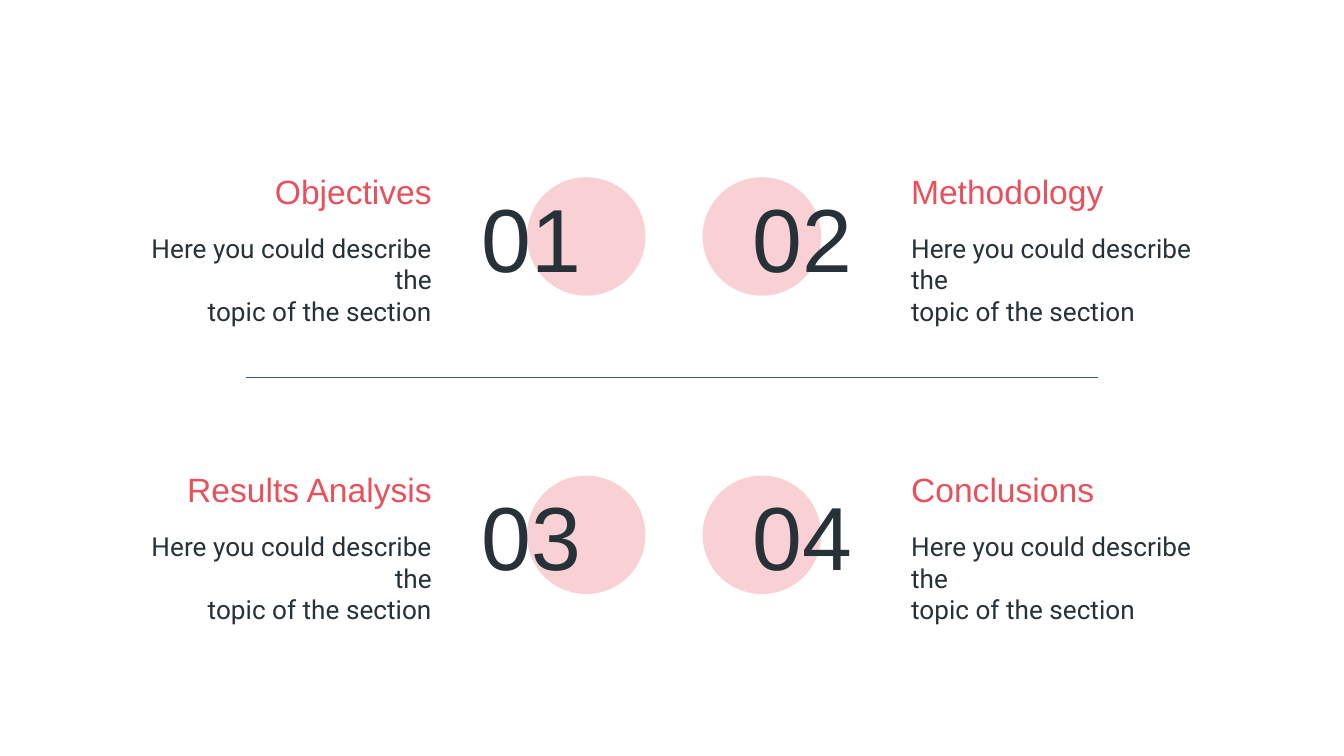
from dataclasses import dataclass
from typing import Any

from lxml import etree
from pptx import Presentation
from pptx import util as u
from pptx.dml.color import RGBColor
from pptx.enum import shapes, text
from pptx.oxml import ns


@dataclass(frozen=True)
class Theme:
    accent: RGBColor = RGBColor(0xE8, 0x50, 0x5B)
    ink: RGBColor = RGBColor(0x26, 0x32, 0x38)
    rule: RGBColor = RGBColor(0x45, 0x5A, 0x64)
    circle_alpha: int = 26000
    heading_font: str = "Arial"
    body_font: str = "Roboto"
    number_size: int = 48
    heading_size: int = 18
    body_size: int = 14


@dataclass(frozen=True)
class Side:
    circle_left: float
    number_left: float
    text_left: float
    number_align: Any
    text_align: Any


@dataclass(frozen=True)
class Box:
    left: float
    top: float
    width: float
    height: float

    def lengths(self) -> tuple[u.Length, ...]:
        return tuple(u.Cm(value) for value in (self.left, self.top, self.width, self.height))


THEME = Theme()
LEFT, RIGHT = text.PP_ALIGN.LEFT, text.PP_ALIGN.RIGHT
SIDES = (
    Side(9.96, 8.86, 2.59, LEFT, RIGHT),
    Side(13.28, 13.03, 16.97, RIGHT, LEFT),
)
ROW_STEP = 5.64
SECTIONS = ("Objectives", "Methodology", "Results Analysis", "Conclusions")
DESCRIPTION = ("Here you could describe the", "topic of the section")
NUMBER_FORMAT = {"name": THEME.heading_font, "size": u.Pt(THEME.number_size)}
HEADING_FORMAT = {"name": THEME.heading_font, "size": u.Pt(THEME.heading_size)}
BODY_FORMAT = {"name": THEME.body_font, "size": u.Pt(THEME.body_size)}


def set_attributes(target: Any, values: dict[str, Any]) -> None:
    for name, value in values.items():
        setattr(target, name, value)


def add_text(slide: Any, box: Box, lines: tuple[str, ...], font_format: dict[str, Any],
             color: RGBColor, align: Any, anchor: Any) -> None:
    frame = slide.shapes.add_textbox(*box.lengths()).text_frame
    margins = {f"margin_{side}": u.Cm(0.25) for side in ("left", "top", "right", "bottom")}
    set_attributes(frame, {"word_wrap": True, "vertical_anchor": anchor, **margins})
    frame.text = "\n".join(lines)
    for paragraph in frame.paragraphs:
        paragraph.alignment = align
        for run in paragraph.runs:
            set_attributes(run.font, font_format)
            run.font.color.rgb = color


def add_circle(slide: Any, box: Box) -> None:
    shape = slide.shapes.add_shape(shapes.MSO_SHAPE.OVAL, *box.lengths())
    shape.shadow.inherit = False
    shape.line.fill.background()
    shape.fill.solid()
    shape.fill.fore_color.rgb = THEME.accent
    color = shape._element.spPr.find(".//" + ns.qn("a:srgbClr"))
    etree.SubElement(color, ns.qn("a:alpha"), val=str(THEME.circle_alpha))


def add_section(slide: Any, index: int, heading: str) -> None:
    row, column = divmod(index, len(SIDES))
    side, offset = SIDES[column], row * ROW_STEP
    add_circle(slide, Box(side.circle_left, 3.35 + offset, 2.24, 2.24))
    add_text(slide, Box(side.number_left, 3.43 + offset, 3.33, 2.08), (f"{index + 1:02}",),
             NUMBER_FORMAT, THEME.ink, side.number_align, text.MSO_ANCHOR.MIDDLE)
    add_text(slide, Box(side.text_left, 3.12 + offset, 5.82, 1.12), (heading,),
             HEADING_FORMAT, THEME.accent, side.text_align, text.MSO_ANCHOR.BOTTOM)
    add_text(slide, Box(side.text_left, 4.14 + offset, 5.82, 1.4), DESCRIPTION,
             BODY_FORMAT, THEME.ink, side.text_align, text.MSO_ANCHOR.TOP)


def add_divider(slide: Any, left: float, right: float, top: float) -> None:
    connector = slide.shapes.add_connector(
        shapes.MSO_CONNECTOR.STRAIGHT, u.Cm(left), u.Cm(top), u.Cm(right), u.Cm(top))
    connector.line.color.rgb = THEME.rule
    connector.line.width = u.Pt(0.75)
    etree.SubElement(connector._element.spPr, ns.qn("a:effectLst"))


def main() -> None:
    presentation = Presentation()
    set_attributes(presentation, {"slide_width": u.Cm(25.4), "slide_height": u.Cm(14.29)})
    slide = presentation.slides.add_slide(presentation.slide_layouts[6])
    for index, heading in enumerate(SECTIONS):
        add_section(slide, index, heading)
    add_divider(slide, 4.65, 20.75, 7.14)
    presentation.save("out.pptx")


if __name__ == "__main__":
    main()
